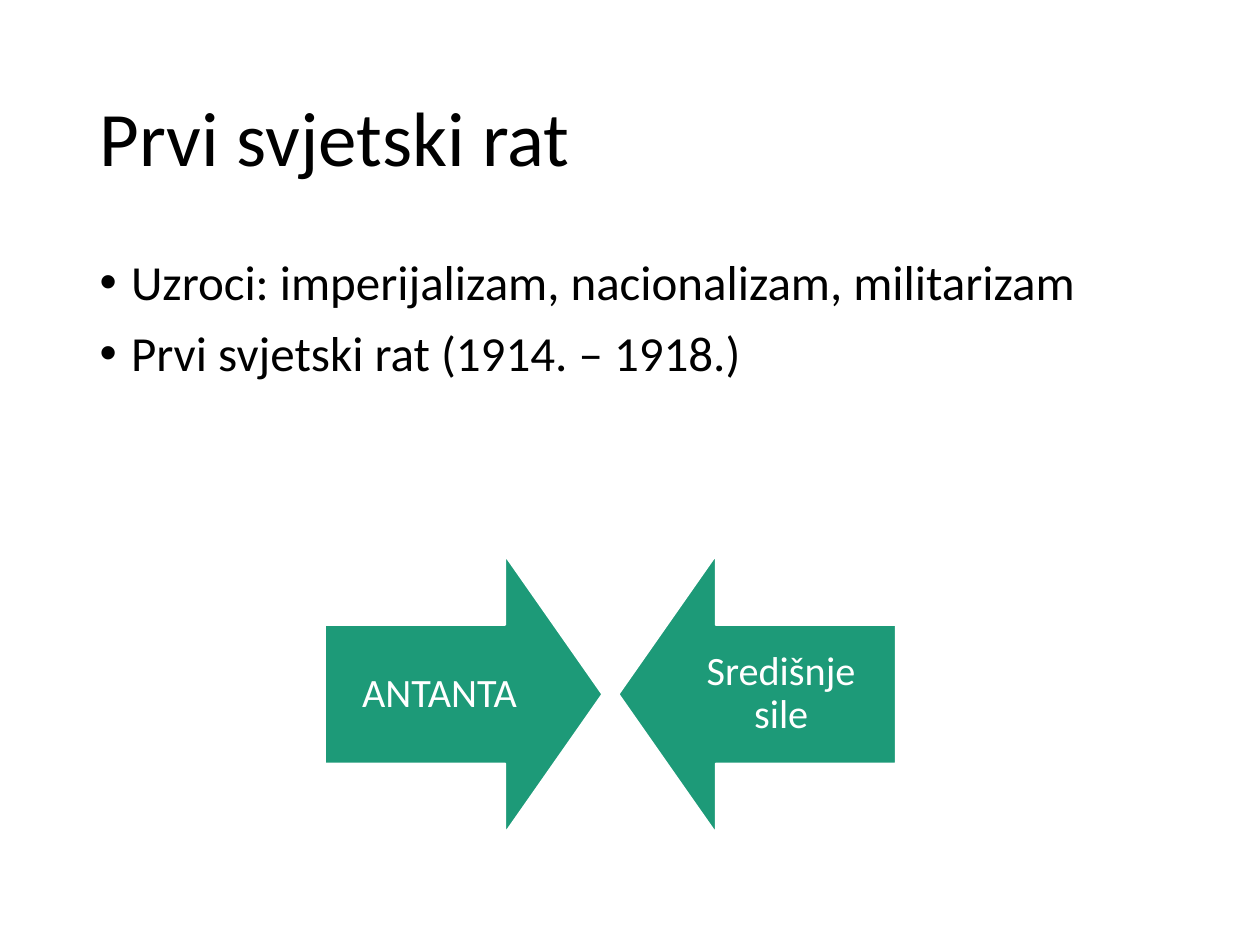
from dataclasses import dataclass

from pptx import Presentation
from pptx.dml.color import RGBColor
from pptx.enum.shapes import MSO_SHAPE as Preset
from pptx.enum.text import MSO_ANCHOR as Anchor, PP_ALIGN as Align
from pptx.oxml.xmlchemy import OxmlElement
from pptx.util import Inches, Pt

BLACK = RGBColor(0x00, 0x00, 0x00)
WHITE = RGBColor(0xFF, 0xFF, 0xFF)
GREEN = RGBColor(0x1D, 0x9A, 0x78)
FONT = "Calibri"

ARROW_SIZE = 2.2
ARROW_TOP = 4.41
HEAD_SHARE = 0.35
LABEL_WIDTH = 1.82
LABEL_HEIGHT = ARROW_SIZE / 2


@dataclass
class Side:
    label: str
    left: float
    rotation: int
    label_left: float


SIDES = [
    Side("ANTANTA", 2.58, 270, 2.58),
    Side("Središnje sile", 4.91, 90, 4.91 + ARROW_SIZE - LABEL_WIDTH),
]


def place(shape, left: float, top: float, width: float, height: float) -> None:
    shape.left, shape.top = Inches(left), Inches(top)
    shape.width, shape.height = Inches(width), Inches(height)


def write(box, lines: list[str], *, size: float, color: RGBColor = BLACK,
          align: Align = Align.LEFT, anchor: Anchor = Anchor.TOP,
          before: float = 0, after: float = 0, bullet: bool = False) -> None:
    frame = box.text_frame
    frame.word_wrap = True
    frame.vertical_anchor = anchor
    for index, line in enumerate(lines):
        para = frame.add_paragraph() if index else frame.paragraphs[0]
        para.alignment = align
        para.line_spacing = 0.9
        para.space_before, para.space_after = Pt(before), Pt(after)
        span = para.add_run()
        span.text = line
        span.font.name, span.font.size = FONT, Pt(size)
        span.font.color.rgb = color
        if bullet:
            add_bullet(para)


def add_bullet(para) -> None:
    properties = para._p.get_or_add_pPr()
    properties.set("marL", str(Inches(0.25)))
    properties.set("indent", str(Inches(-0.25)))
    font = OxmlElement("a:buFont")
    font.set("typeface", "Arial")
    mark = OxmlElement("a:buChar")
    mark.set("char", "•")
    properties.extend([font, mark])


def draw_side(page, side: Side) -> None:
    arrow = page.shapes.add_shape(
        Preset.DOWN_ARROW, Inches(side.left), Inches(ARROW_TOP),
        Inches(ARROW_SIZE), Inches(ARROW_SIZE))
    arrow.adjustments[0], arrow.adjustments[1] = 0.5, HEAD_SHARE
    arrow.rotation = side.rotation
    arrow.shadow.inherit = False
    arrow.fill.solid()
    arrow.fill.fore_color.rgb = GREEN
    arrow.line.color.rgb = WHITE
    arrow.line.width = Pt(1)

    # Upright label over the shaft
    box = page.shapes.add_textbox(
        Inches(side.label_left), Inches(ARROW_TOP + LABEL_HEIGHT / 2),
        Inches(LABEL_WIDTH), Inches(LABEL_HEIGHT))
    frame = box.text_frame
    frame.margin_left = frame.margin_right = Inches(0.18)
    frame.margin_top = frame.margin_bottom = Inches(0.18)
    write(box, [side.label], size=23, color=WHITE, align=Align.CENTER,
          anchor=Anchor.MIDDLE, after=8)


def main() -> None:
    deck = Presentation()
    deck.slide_width, deck.slide_height = Inches(10), Inches(7.5)
    page = deck.slides.add_slide(deck.slide_layouts[1])

    # Title and list
    title, body = page.shapes.title, page.placeholders[1]
    place(title, 0.69, 0.4, 8.62, 1.45)
    write(title, ["Prvi svjetski rat"], size=44, anchor=Anchor.MIDDLE)
    place(body, 0.69, 2, 8.62, 4.76)
    write(body, ["Uzroci: imperijalizam, nacionalizam, militarizam",
                 "Prvi svjetski rat (1914. – 1918.)"],
          size=28, before=10, bullet=True)

    # Opposing arrows
    for side in SIDES:
        draw_side(page, side)

    deck.save("out.pptx")


if __name__ == "__main__":
    main()
